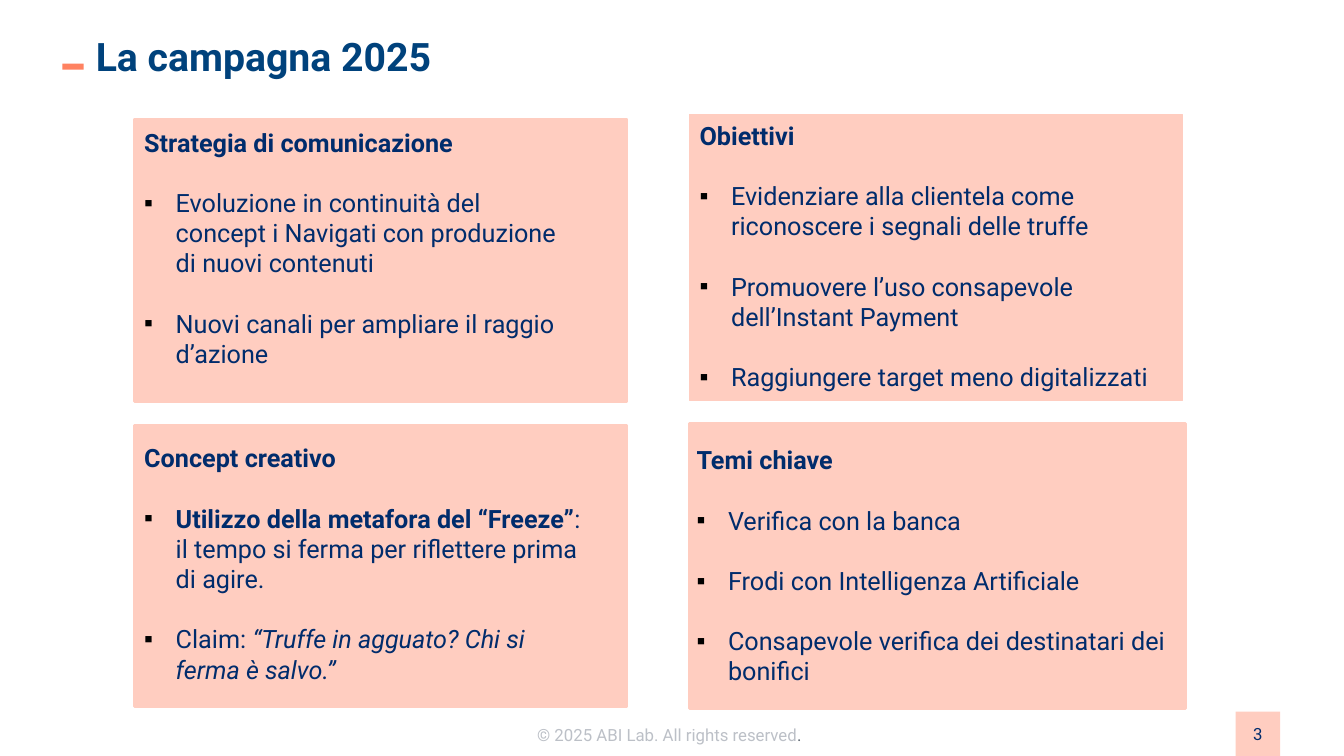
from lxml import etree
from pptx import Presentation
from pptx.dml.color import RGBColor
from pptx.enum.shapes import MSO_SHAPE
from pptx.enum.text import MSO_ANCHOR, MSO_AUTO_SIZE, PP_ALIGN
from pptx.oxml.ns import qn
from pptx.util import Pt

NAVY = RGBColor(0x00, 0x2C, 0x6C)
BLUE = RGBColor(0x00, 0x42, 0x7C)
CORAL = RGBColor(0xFF, 0x82, 0x61)
PEACH = RGBColor(0xFF, 0xCD, 0xC0)
LIGHT_GREY = RGBColor(0xBC, 0xC0, 0xC7)
DARK_GREY = RGBColor(0x5D, 0x66, 0x71)
INDENT = Pt(22.5)
BLANK_LINE = Pt(21.5)


def add_text(p, text, size=18, color=NAVY, bold=False, italic=False):
    r = p.add_run()
    r.text = text
    r.font.name = "Roboto"
    r.font.size = Pt(size)
    r.font.color.rgb = color
    r.font.bold = bold
    r.font.italic = italic


def add_rect(left, top, width, height, color, line=None):
    sp = slide.shapes.add_shape(
        MSO_SHAPE.RECTANGLE, Pt(left), Pt(top), Pt(width), Pt(height))
    sp.shadow.inherit = False
    sp.fill.solid()
    sp.fill.fore_color.rgb = color
    if line:
        sp.line.color.rgb = color
        sp.line.width = Pt(line)
    else:
        sp.line.fill.background()
    return sp


prs = Presentation()
prs.slide_width, prs.slide_height = Pt(960), Pt(540)
slide = prs.slides.add_slide(prs.slide_layouts.get_by_name("Comparison"))
title, *bodies = slide.placeholders

# Title and its accent dash
add_rect(44.6, 45.4, 15.1, 4.3, CORAL)
title.left, title.top, title.width, title.height = Pt(61.2), Pt(25.2), Pt(721.4), Pt(29.5)
title.text_frame.vertical_anchor = MSO_ANCHOR.MIDDLE
title.text_frame.auto_size = MSO_AUTO_SIZE.NONE
p = title.text_frame.paragraphs[0]
p.alignment = PP_ALIGN.LEFT
add_text(p, "La campagna 2025", size=28, color=BLUE, bold=True)

# Page number and copyright line
badge = add_rect(882.7, 508.3, 31.7, 31.7, PEACH)
badge.text_frame.vertical_anchor = MSO_ANCHOR.MIDDLE
p = badge.text_frame.paragraphs[0]
p.alignment = PP_ALIGN.CENTER
add_text(p, "3", size=12)

footer = slide.shapes.add_textbox(Pt(376.6), Pt(514.1), Pt(207.4), Pt(21.6))
footer.text_frame.word_wrap = True
p = footer.text_frame.paragraphs[0]
add_text(p, "© 2025 ABI Lab. All rights reserved", size=12, color=LIGHT_GREY)
add_text(p, ".", size=12, color=DARK_GREY)

# Panels behind the text; the "Obiettivi" box carries its own fill
for left, top, width, height in [
    (95.8, 85, 352.1, 201.6),
    (95.8, 303.8, 352.1, 200.9),
    (492.5, 302.4, 354.2, 203.8),
]:
    panel = add_rect(left, top, width, height, PEACH, line=2)
    title._element.addprevious(panel._element)

# Each bullet is a list of (text, format) runs
sections = [
    ("Strategia di comunicazione", (95.8, 87.1, 320.4, 181.4), [
        [("Evoluzione in continuità del concept i Navigati con produzione "
          "di nuovi contenuti", {})],
        [("Nuovi canali per ampliare il raggio d’azione", {})],
    ]),
    ("Obiettivi", (492.5, 82.1, 352.1, 203.8), [
        [("Evidenziare alla clientela come riconoscere i segnali delle truffe", {})],
        [("Promuovere l’uso consapevole dell’Instant Payment", {})],
        [("Raggiungere target meno digitalizzati", {})],
    ]),
    ("Concept creativo", (95.8, 312.5, 326.2, 181.4), [
        [("Utilizzo della metafora del “Freeze”", {"bold": True}),
         (": il tempo si ferma per riflettere prima di agire.", {})],
        [("Claim: ", {}),
         ("“Truffe in agguato? Chi si ferma è salvo.”", {"italic": True})],
    ]),
    ("Temi chiave", (490.3, 313.9, 355.7, 181.4), [
        [("Verifica con la banca", {})],
        [("Frodi con Intelligenza Artificiale", {})],
        [("Consapevole verifica dei destinatari dei bonifici", {})],
    ]),
]
for body, (heading, box, bullets) in zip(bodies, sections):
    body.left, body.top, body.width, body.height = map(Pt, box)
    if heading == "Obiettivi":
        body.fill.solid()
        body.fill.fore_color.rgb = PEACH
        body.line.color.rgb = PEACH
        body.line.width = Pt(0.75)
    tf = body.text_frame
    tf.word_wrap = True
    tf.auto_size = MSO_AUTO_SIZE.NONE
    tf.vertical_anchor = MSO_ANCHOR.TOP

    p = tf.paragraphs[0]
    pPr = p._p.get_or_add_pPr()
    pPr.set("marL", "0")
    pPr.set("indent", "0")
    etree.SubElement(pPr, qn("a:buNone"))
    p.space_before = Pt(0)
    add_text(p, heading, bold=True)

    for runs in bullets:
        p = tf.add_paragraph()
        pPr = p._p.get_or_add_pPr()
        pPr.set("marL", str(INDENT))
        pPr.set("indent", str(-INDENT))
        bullet_color = etree.SubElement(pPr, qn("a:buClr"))
        etree.SubElement(bullet_color, qn("a:srgbClr"), val="000000")
        etree.SubElement(pPr, qn("a:buFont"), typeface="Arial")
        etree.SubElement(pPr, qn("a:buChar"), char="▪")
        p.space_before = BLANK_LINE
        for text, style in runs:
            add_text(p, text, **style)

prs.save("out.pptx")
